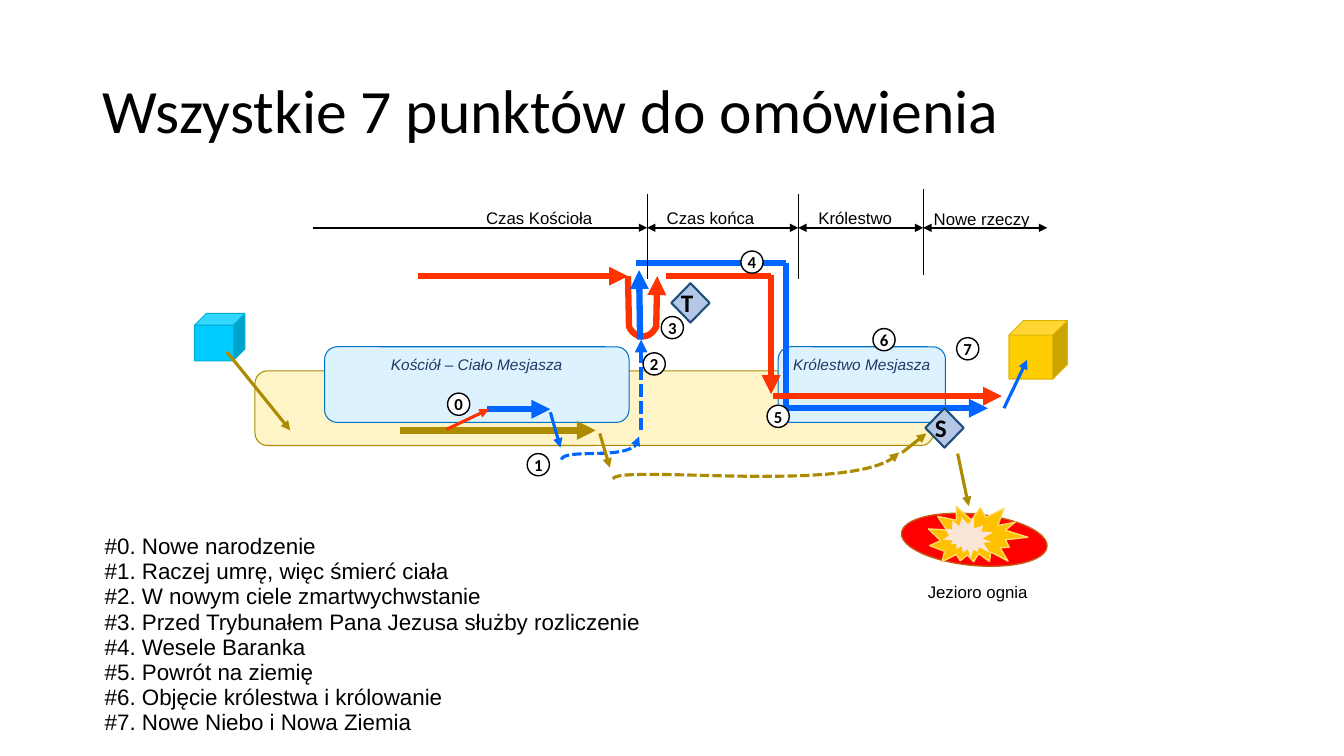
from dataclasses import dataclass

import pptx
import pptx.dml.color
import pptx.enum.dml
import pptx.enum.shapes
import pptx.enum.text
import pptx.oxml.ns
import pptx.util
from lxml import etree

# Grid: ten columns and ten rows to the inch
CELL = pptx.util.Inches(0.1)
SLIDE_COLUMNS, SLIDE_ROWS = 133.33, 75

BLACK, WHITE = "000000", "FFFFFF"
BLUE, RED, GOLD = "0066FF", "FF3300", "AD8B00"
PALE_BLUE, SKY_LINE, NAVY = "DDF2FF", "0070C0", "203864"

Preset = pptx.enum.shapes.MSO_SHAPE
Align = pptx.enum.text.PP_ALIGN
Point = tuple[float, float]


@dataclass
class Line:
    start: Point
    end: Point
    color: str
    width: float
    tail: bool = True
    head: bool = False
    dashed: bool = False


@dataclass
class Curve:
    points: list[Point]
    color: str
    width: float
    dashed: bool = False


@dataclass
class Block:
    preset: Preset
    box: tuple[float, float, float, float]
    fill: str
    line: str | None
    line_width: float = 0.75
    rotation: float = 0
    text: str = ""
    size: float = 12
    font: str = "Calibri"
    color: str = BLACK
    bold: bool = False
    italic: bool = False
    align: Align = Align.CENTER
    top: bool = False


@dataclass
class Label:
    text: str
    box: tuple[float, float, float, float]


def cells(*values: float) -> list[int]:
    return [round(value * CELL) for value in values]


def rgb(value: str) -> pptx.dml.color.RGBColor:
    return pptx.dml.color.RGBColor.from_string(value)


def format_line(line, color: str, width: float, dashed=False, head=False, tail=False) -> None:
    line.color.rgb = rgb(color)
    line.width = pptx.util.Pt(width)
    if dashed:
        line.dash_style = pptx.enum.dml.MSO_LINE.SQUARE_DOT
    for wanted, tag in ((head, "a:headEnd"), (tail, "a:tailEnd")):
        if wanted:
            end = etree.SubElement(line._get_or_add_ln(), pptx.oxml.ns.qn(tag))
            end.set("type", "triangle")


def format_text(paragraph, size: float, font: str, color=BLACK, align=Align.LEFT) -> None:
    paragraph.alignment = align
    paragraph.font.size = pptx.util.Pt(size)
    paragraph.font.name = font
    paragraph.font.color.rgb = rgb(color)


def set_margins(frame, side: float, edge: float) -> None:
    frame.margin_left = frame.margin_right = round(side * CELL)
    frame.margin_top = frame.margin_bottom = round(edge * CELL)


def draw_line(slide, item: Line) -> None:
    connector = slide.shapes.add_connector(
        pptx.enum.shapes.MSO_CONNECTOR.STRAIGHT, *cells(*item.start, *item.end))
    format_line(connector.line, item.color, item.width, item.dashed, item.head, item.tail)
    etree.SubElement(connector._element.spPr, pptx.oxml.ns.qn("a:effectLst"))


def bezier(a: Point, b: Point, c: Point, d: Point, steps: int = 24) -> list[Point]:
    def blend(t: float, axis: int) -> float:
        u = 1 - t
        return (u**3 * a[axis] + 3 * u * u * t * b[axis]
                + 3 * u * t * t * c[axis] + t**3 * d[axis])
    return [(blend(i / steps, 0), blend(i / steps, 1)) for i in range(steps + 1)]


def draw_curve(slide, item: Curve) -> None:
    first, *rest = [tuple(cells(*point)) for point in item.points]
    builder = slide.shapes.build_freeform(*first)
    builder.add_line_segments(rest, close=False)
    shape = builder.convert_to_shape()
    shape.shadow.inherit = False
    shape.fill.background()
    format_line(shape.line, item.color, item.width, item.dashed, tail=True)


def draw_block(slide, item: Block) -> None:
    shape = slide.shapes.add_shape(item.preset, *cells(*item.box))
    shape.shadow.inherit = False
    shape.rotation = item.rotation
    shape.fill.solid()
    shape.fill.fore_color.rgb = rgb(item.fill)
    if item.line:
        format_line(shape.line, item.line, item.line_width)
    else:
        shape.line.fill.background()
    if item.text:
        frame = shape.text_frame
        frame.word_wrap = False
        anchor = pptx.enum.text.MSO_ANCHOR
        frame.vertical_anchor = anchor.TOP if item.top else anchor.MIDDLE
        set_margins(frame, 0, 0.5 if item.top else 0)
        paragraph = frame.paragraphs[0]
        paragraph.text = item.text
        format_text(paragraph, item.size, item.font, item.color, item.align)
        paragraph.font.bold, paragraph.font.italic = item.bold, item.italic


def draw_label(slide, item: Label) -> None:
    frame = slide.shapes.add_textbox(*cells(*item.box)).text_frame
    frame.word_wrap = True
    frame.auto_size = pptx.enum.text.MSO_AUTO_SIZE.SHAPE_TO_FIT_TEXT
    frame.vertical_anchor = pptx.enum.text.MSO_ANCHOR.MIDDLE
    set_margins(frame, 0.3, 0.3)
    frame.text = item.text
    format_text(frame.paragraphs[0], 12, "Arial", align=Align.CENTER)


def area(text: str, left: float, width: float) -> Block:
    return Block(Preset.ROUNDED_RECTANGLE, (left, 34.4, width, 7.5), PALE_BLUE, SKY_LINE,
                 text=text, size=11, font="Arial", color=NAVY, italic=True, top=True)


def judgement(letter: str, left: float, top: float) -> Block:
    return Block(Preset.DIAMOND, (left, top, 3.8, 3.9), "B4C7E7", "1F4E79", 1.5,
                 text=letter, size=18, bold=True, align=Align.LEFT)


def marker(number: int, left: float, top: float) -> Block:
    return Block(Preset.OVAL, (left, top, 2.2, 2.2), WHITE, BLACK, 1,
                 text=str(number), bold=True)


AREAS = [
    Block(Preset.ROUNDED_RECTANGLE, (25.3, 36.8, 67.3, 7.4), "FFF4C7", GOLD),
    area("Królestwo Mesjasza", 77.2, 16.6),
    area("Kościół – Ciało Mesjasza", 32.2, 30.2),
]
SYMBOLS = [
    judgement("T", 66.6, 28.1),
    judgement("S", 91.8, 40.5),
    Block(Preset.FLOWCHART_CONNECTOR, (89.4, 51, 14.5, 5.1), "FF0000", "C55A11", 1, 5.4),
    Block(Preset.EXPLOSION2, (92.1, 49.8, 9.7, 6.8), "FFC000", "FFD966", 1, 16.2),
    Block(Preset.EXPLOSION2, (93.8, 51.1, 4.7, 4.5), "FBE5D6", None, rotation=56.2),
    Block(Preset.CUBE, (100.1, 31.8, 5.8, 5.8), "FFCE00", "E0B400"),
    Block(Preset.CUBE, (19.3, 31.1, 5, 4.7), "00CCFF", "00AED8"),
]
MARKERS = [marker(number, *place) for number, place in enumerate([
    (44.4, 39), (52.3, 45), (63.8, 35), (65.6, 31.4),
    (73.5, 24.9), (76.1, 40.2), (86.6, 32.6), (94.9, 33.5)])]

# Thick routes of the groups, then the timeline with its dividers
ROUTES = [
    Line((39.7, 42.7), (59.1, 42.7), GOLD, 4.5),
    Line((41.5, 27.4), (62.3, 27.4), RED, 4.5),
    Line((48.3, 40.6), (54.6, 40.6), BLUE, 4.5),
    Line((63.1, 26.1), (78, 26.1), BLUE, 4.5, tail=False),
    Curve([(62.3, 27.4), *bezier((62.4, 32.4), (63, 33.7), (64.5, 33.7), (65.1, 32.4)),
           (65.2, 27.4)], RED, 4.5),
    Line((76.5, 27.3), (76.5, 39.1), RED, 4.5),
    Line((66.1, 27.4), (76.5, 27.4), RED, 4.5, tail=False),
    Line((78, 26.1), (78, 40.5), BLUE, 4.5, tail=False),
    Line((76.7, 39.3), (99.4, 39.3), RED, 4.5),
    Line((78, 40.5), (98, 40.5), BLUE, 4.5),
    Curve(bezier((55.7, 45.6), (56, 44.3), (63.5, 46), (63.4, 43.3)), BLUE, 2.25, True),
    Line((63.5, 33.7), (63.4, 26.8), BLUE, 4.5),
    Line((63.6, 42.7), (63.6, 33.7), BLUE, 3, dashed=True),
]
PERIODS = [31.1, 64.2, 79.2, 91.6, 103.9]
TIMELINE = [Line((start, 22.6), (end, 22.6), BLACK, 1.5, head=index > 0)
            for index, (start, end) in enumerate(zip(PERIODS, PERIODS[1:]))]
DIVIDERS = [Line((column, row), (column, row + 8.5), BLACK, 0.5, tail=False)
            for column, row in zip(PERIODS[1:4], (19.2, 19.2, 18.8))]
STEPS = [
    Curve(bezier((60.8, 47.5), (61.5, 46), (85.7, 49.2), (89.2, 44.9)), GOLD, 2.25, True),
    Line((89.5, 44.9), (91.9, 43), GOLD, 2.25),
    Line((59.5, 43), (60.5, 46.4), GOLD, 2.25),
    Line((54.6, 40.9), (55.6, 44.4), BLUE, 2.25),
    Line((95, 45), (96.1, 50.2), GOLD, 2.25),
    Line((99.6, 40.5), (101.9, 35.7), BLUE, 2.25),
    Line((44.3, 42.6), (48.5, 40.6), RED, 2.25),
    Line((22.5, 34.9), (28.8, 42.7), GOLD, 2.25),
]
LABELS = [
    Label("Czas Kościoła", (46.3, 20.3, 14.4, 2.6)),
    Label("Czas końca", (64.8, 20.3, 11.4, 2.6)),
    Label("Królestwo", (80.2, 20.3, 9.3, 2.6)),
    Label("Nowe rzeczy", (91.6, 20.4, 11.6, 2.6)),
    Label("Jezioro ognia", (89.8, 57.4, 14.4, 2.6)),
]
POINTS = ["Nowe narodzenie", "Raczej umrę, więc śmierć ciała", "W nowym ciele zmartwychwstanie",
          "Przed Trybunałem Pana Jezusa służby rozliczenie", "Wesele Baranka",
          "Powrót na ziemię", "Objęcie królestwa i królowanie", "Nowe Niebo i Nowa Ziemia"]
DRAWERS = {Line: draw_line, Curve: draw_curve, Block: draw_block, Label: draw_label}


def main() -> None:
    presentation = pptx.Presentation()
    presentation.slide_width, presentation.slide_height = cells(SLIDE_COLUMNS, SLIDE_ROWS)
    slide = presentation.slides.add_slide(presentation.slide_layouts[5])

    # Title
    title = slide.shapes.title
    title.left, title.top, title.width, title.height = cells(9.2, 4, 115, 14.5)
    title.text_frame.text = "Wszystkie 7 punktów do omówienia"
    title.text_frame.vertical_anchor = pptx.enum.text.MSO_ANCHOR.MIDDLE
    format_text(title.text_frame.paragraphs[0], 44, "Calibri")
    title.text_frame.paragraphs[0].line_spacing = 0.9

    # Diagram, from back to front
    for item in [*AREAS, *ROUTES, *TIMELINE, *DIVIDERS, *LABELS, *SYMBOLS, *STEPS, *MARKERS]:
        DRAWERS[type(item)](slide, item)

    # Numbered points
    frame = slide.shapes.add_textbox(*cells(9.4, 52.5, 86.2, 15)).text_frame
    frame.word_wrap = True
    for number, text in enumerate(POINTS):
        paragraph = frame.add_paragraph() if number else frame.paragraphs[0]
        paragraph.text = f"#{number}. {text}"
        format_text(paragraph, 16, "Arial")
        paragraph.line_spacing = 0.94

    presentation.save("out.pptx")


if __name__ == "__main__":
    main()
